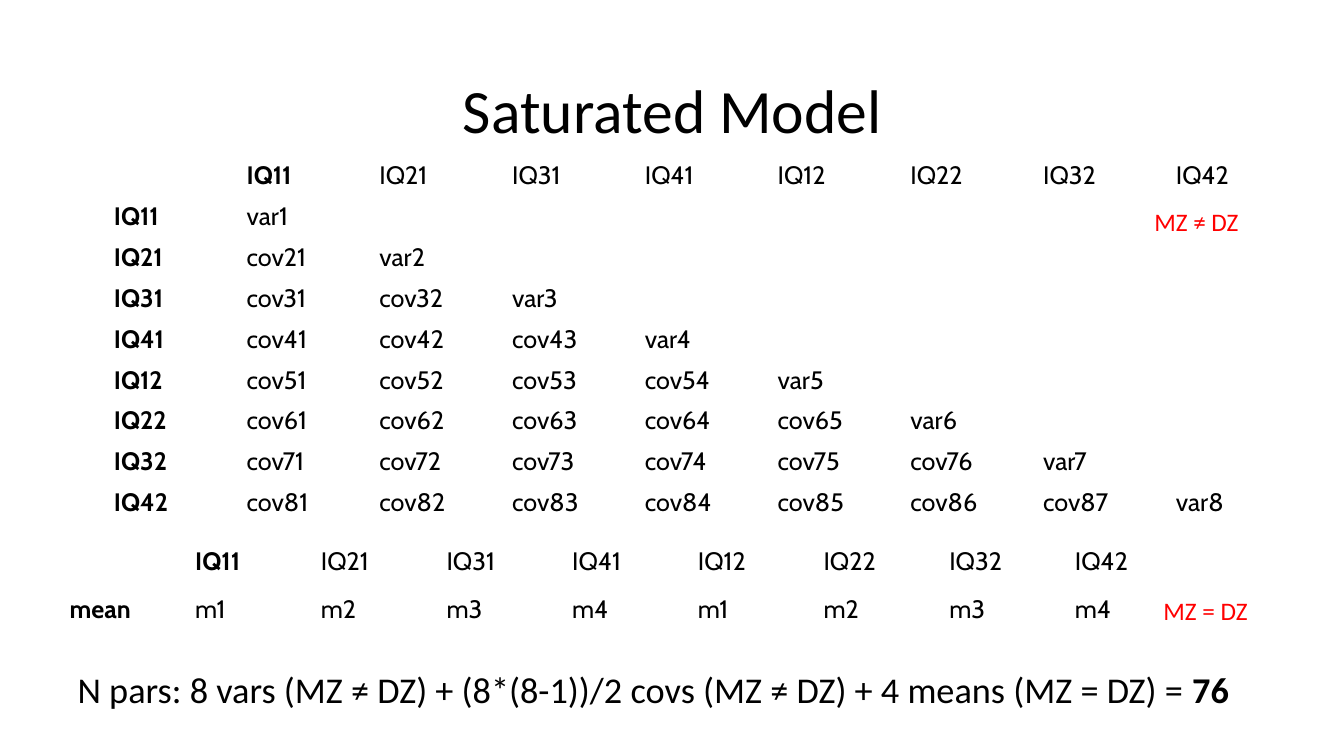
from lxml import etree
from pptx import Presentation
from pptx import util as u
from pptx.dml.color import RGBColor
from pptx.enum import text
from pptx.oxml.ns import qn

COLORS = {"ink": "000000", "note": "FF0000"}
VARIABLES = [f"IQ{trait}{twin}" for twin in (1, 2) for trait in (1, 2, 3, 4)]


def style_font(font, name, size, color="ink", bold=False):
    font.name, font.size, font.bold = name, u.Pt(size), bold
    font.color.rgb = RGBColor.from_string(COLORS[color])


def place(shape, box):
    shape.left, shape.top, shape.width, shape.height = map(u.Inches, box)


def add_title(slide, box, wording):
    title = slide.shapes.title
    place(title, box)
    title.text_frame.text = wording
    title.text_frame.vertical_anchor = text.MSO_ANCHOR.MIDDLE
    paragraph = title.text_frame.paragraphs[0]
    paragraph.alignment = text.PP_ALIGN.CENTER
    paragraph.line_spacing = 0.9
    style_font(paragraph.font, "Calibri", 44)


def add_parameter_count(slide, box, formula, total):
    body = slide.placeholders[1]
    place(body, box)
    body.text_frame.auto_size = text.MSO_AUTO_SIZE.NONE
    paragraph = body.text_frame.paragraphs[0]
    paragraph.line_spacing, paragraph.space_before = 0.9, u.Pt(10)
    style_font(paragraph.font, "Calibri", 25.9)
    paragraph.add_run().text = formula
    total_run = paragraph.add_run()
    total_run.text = total
    total_run.font.bold = True
    properties = paragraph._p.get_or_add_pPr()
    properties.set("marL", "0")
    properties.set("indent", "0")
    bullet = etree.Element(qn("a:buNone"))
    properties.find(qn("a:defRPr")).addprevious(bullet)


def add_matrix(slide, box, rows, row_heights):
    """Table with bold row labels and a bold first column heading."""
    columns = len(rows[0])
    table = slide.shapes.add_table(len(rows), columns, *map(u.Inches, box)).table
    table.horz_banding = False
    for column in table.columns:
        column.width = u.Inches(box[2] / columns)
    for i, (row, height) in enumerate(zip(rows, row_heights)):
        table.rows[i].height = u.Inches(height)
        for j, wording in enumerate(row):
            cell = table.cell(i, j)
            cell.fill.background()
            cell.margin_left = cell.margin_right = u.Inches(0.13)
            cell.margin_top = cell.margin_bottom = u.Inches(0.05)
            cell.text = wording
            bold = j == 0 or (i, j) == (0, 1)
            style_font(cell.text_frame.paragraphs[0].font, "Cabin", 18, bold=bold)


def add_note(slide, box, wording):
    frame = slide.shapes.add_textbox(*map(u.Inches, box)).text_frame
    frame.word_wrap = True
    frame.text = wording
    style_font(frame.paragraphs[0].font, "Calibri", 18, "note")


def covariance_rows():
    rows = [["", *VARIABLES]]
    for i, variable in enumerate(VARIABLES, 1):
        covariances = [f"cov{i}{j}" for j in range(1, i)]
        blanks = [""] * (len(VARIABLES) - i)
        rows.append([variable, *covariances, f"var{i}", *blanks])
    return rows


def mean_rows():
    return [["", *VARIABLES], ["mean", *(f"m{name[2]}" for name in VARIABLES)]]


def build_saturated_model(slide):
    add_title(slide, (0.92, 0.4, 11.5, 1.45), "Saturated Model")
    add_parameter_count(
        slide, (0.67, 6.62, 12.44, 0.5),
        "N pars: 8 vars (MZ ≠ DZ) + (8*(8-1))/2 covs (MZ ≠ DZ) + 4 means (MZ = DZ) = ",
        "76")
    add_matrix(slide, (0.56, 5.37, 11.22, 0.88), mean_rows(), (0.47, 0.41))
    covariances = covariance_rows()
    height = 3.65
    add_matrix(slide, (1, 1.54, 11.85, height), covariances,
               [height / len(covariances)] * len(covariances))
    add_note(slide, (11.35, 2, 1.56, 0.4), "MZ ≠ DZ")
    add_note(slide, (11.44, 5.86, 1.56, 0.4), "MZ = DZ")


def main():
    presentation = Presentation()
    presentation.slide_width = u.Inches(13.33)
    presentation.slide_height = u.Inches(7.5)
    build_saturated_model(presentation.slides.add_slide(presentation.slide_layouts[1]))
    presentation.save("out.pptx")


if __name__ == "__main__":
    main()
